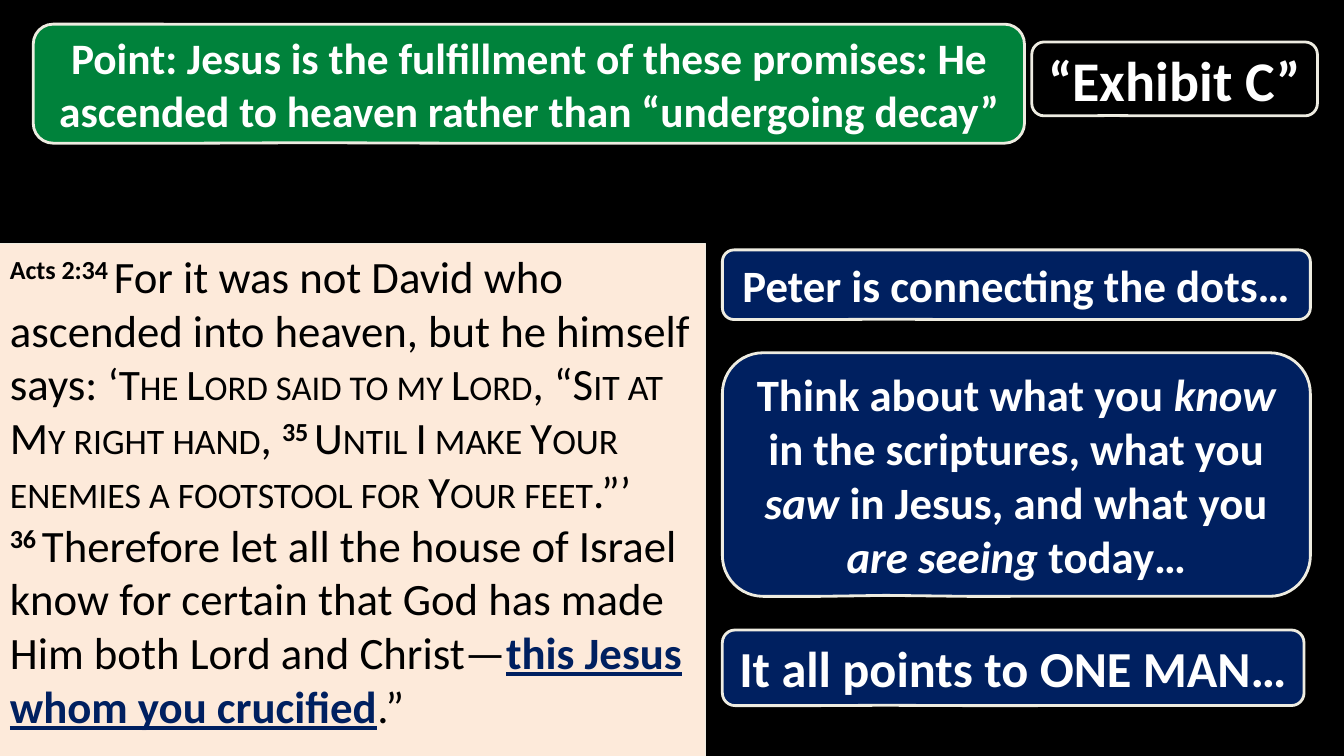
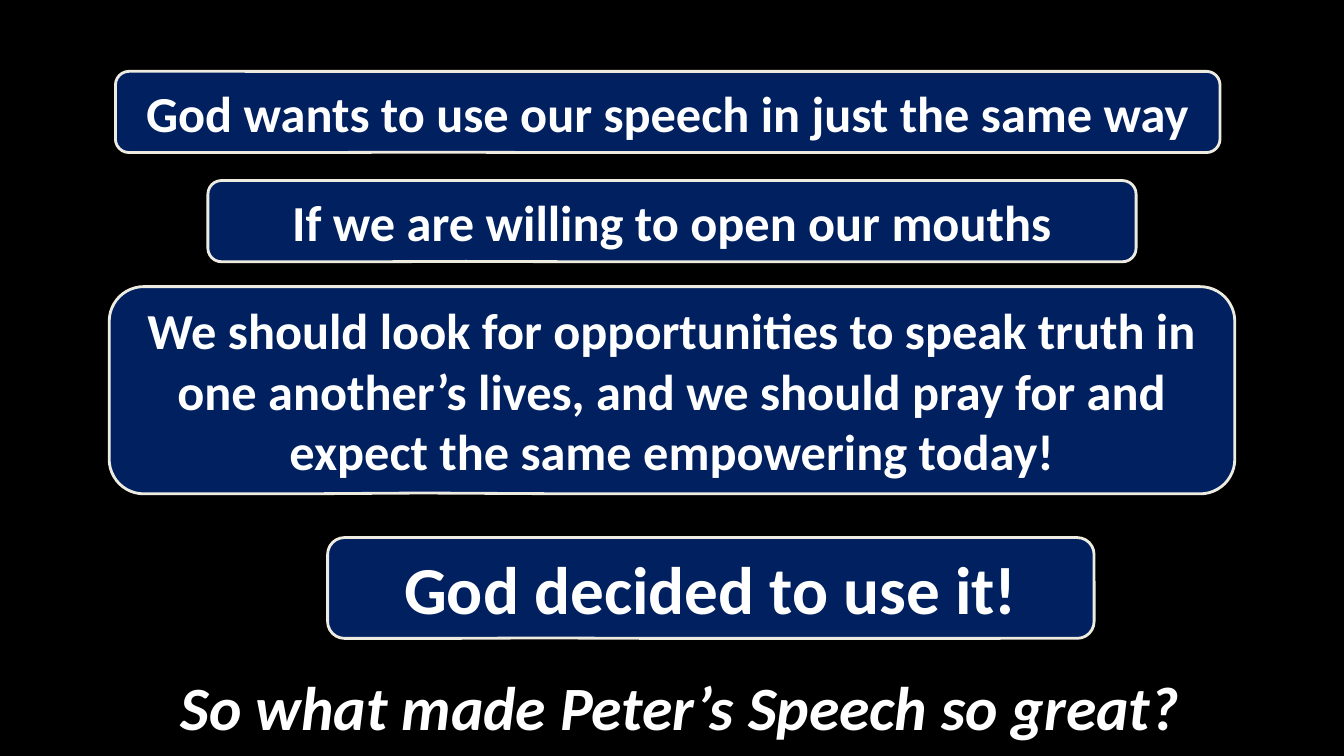
from pptx import Presentation
from pptx import util as u
from pptx.dml import color
from pptx.enum import shapes, text
from pptx.oxml import xmlchemy
from lxml import etree

COLORS = {"black": "000000", "white": "FFFFFF", "navy": "002060",
          "green": "00823B", "peach": "FDEADA", "cream": "EEECE1"}
FONT = "Calibri"
CALLOUT = shapes.MSO_SHAPE.ROUNDED_RECTANGULAR_CALLOUT
POINTER = (-0.222, 0.496, 0.167)  # tip tucked inside the lower edge


def rgb(name):
    return color.RGBColor.from_string(COLORS[name])


def add_box(slide, kind, place, fill, line_width, paragraphs, base, align, anchor):
    """Draw one box; each run is (text, format values that differ from base)."""
    box = slide.shapes.add_shape(kind, *(u.Pt(v) for v in place))
    box.shadow.inherit = False
    box.fill.solid()
    box.fill.fore_color.rgb = rgb(fill)
    if line_width:
        box.line.color.rgb = rgb("cream")
        box.line.width = u.Pt(line_width)
    else:
        box.line.fill.background()
    frame = box.text_frame
    frame.word_wrap = True
    frame.vertical_anchor = anchor
    for index, runs in enumerate(paragraphs):
        paragraph = frame.add_paragraph() if index else frame.paragraphs[0]
        paragraph.alignment = align
        for words, changes in runs:
            run = paragraph.add_run()
            run.text = words
            for key, value in {**base, **changes}.items():
                if key == "color":
                    run.font.color.rgb = rgb(value)
                elif key in ("baseline", "cap"):
                    run._r.get_or_add_rPr().set(key, value)
                else:
                    setattr(run.font, key, value)
    return box


deck = Presentation()
deck.slide_width, deck.slide_height = u.Pt(960), u.Pt(540)
exhibit, application = (deck.slides.add_slide(deck.slide_layouts[6]) for _ in range(2))
for slide in (exhibit, application):
    slide.background.fill.solid()
    slide.background.fill.fore_color.rgb = rgb("black")

# Scripture passage
verse = {"baseline": "30000", "bold": True}
caps = {"cap": "small"}
key_phrase = {"color": "navy", "bold": True, "underline": True}
passage = [
    [("Acts 2:34 ", verse),
     ("For it was not David who ascended into heaven, but he himself says: ‘", {}),
     ("The Lord said to my Lord", {**caps, "size": u.Pt(31)}),
     (", “", {}),
     ("Sit at My right hand", caps),
     (", ", {}),
     ("35 ", verse),
     ("Until I make Your enemies a footstool for Your feet", caps),
     (".”’", {})],
    [("36 ", verse),
     ("Therefore let all the house of Israel know for certain that God has made "
      "Him both Lord and Christ—", {}),
     ("this Jesus whom you crucified", key_phrase),
     (".”", {})],
]
add_box(exhibit, shapes.MSO_SHAPE.RECTANGLE, (0, 174, 504, 366.5), "peach", 0.75, passage,
        {"name": FONT, "size": u.Pt(32), "color": "black", "bold": False},
        text.PP_ALIGN.LEFT, text.MSO_ANCHOR.TOP)

# Callouts: slide, place, fill, line width, text size, runs
italic = {"italic": True}
callouts = [
    (exhibit, (23.75, 17.25, 708, 85), "green", 2, 31,
     [("Point: Jesus is the fulfillment of these promises: He ascended to heaven "
       "rather than “undergoing decay”", {})]),
    (exhibit, (737, 30, 204, 52.75), "black", 2, 40, [("“Exhibit C”", {})]),
    (exhibit, (516, 178.5, 420, 49.75), "navy", 2, 32,
     [("Peter is connecting the dots…", {})]),
    (exhibit, (516, 450, 415.5, 54), "navy", 2, 36,
     [("It all points to ONE MAN…", {})]),
    (exhibit, (516, 252, 420, 174), "navy", 2, 32,
     [("Think about what you ", {}), ("know", italic),
      (" in the scriptures, what you ", {}), ("saw", italic),
      (" in Jesus, and what you ", {}), ("are seeing ", italic), ("today…", {})]),
    (application, (-12, 468, 996, 72), "black", 0, 44,
     [("So what made Peter’s Speech so great?", italic)]),
    (application, (234, 384, 547.5, 72), "navy", 2, 48, [("God decided to use it!", {})]),
    (application, (82.5, 51, 789, 58), "navy", 2, 36,
     [("God wants to use our speech in just the same way", {})]),
    (application, (148.5, 129, 663, 58), "navy", 2, 36,
     [("If we are willing to open our mouths", {})]),
    (application, (78, 204.75, 804, 148), "navy", 2, 36,
     [("We should look for opportunities to speak truth in one another’s lives, and we "
       "should pray for and expect the same empowering today!", {})]),
]
for slide, place, fill, line_width, size, runs in callouts:
    callout = add_box(slide, CALLOUT, place, fill, line_width, [runs],
                      {"name": FONT, "size": u.Pt(size), "color": "white", "bold": True},
                      text.PP_ALIGN.CENTER, text.MSO_ANCHOR.MIDDLE)
    for index, value in enumerate(POINTER):
        callout.adjustments[index] = value
    if not line_width:
        # The closing question sits on a half-transparent band
        tint = callout.fill._xPr.find(".//{*}srgbClr")
        alpha = etree.SubElement(tint, tint.tag.replace("srgbClr", "alpha"))
        alpha.set("val", "51000")

deck.save("out.pptx")
